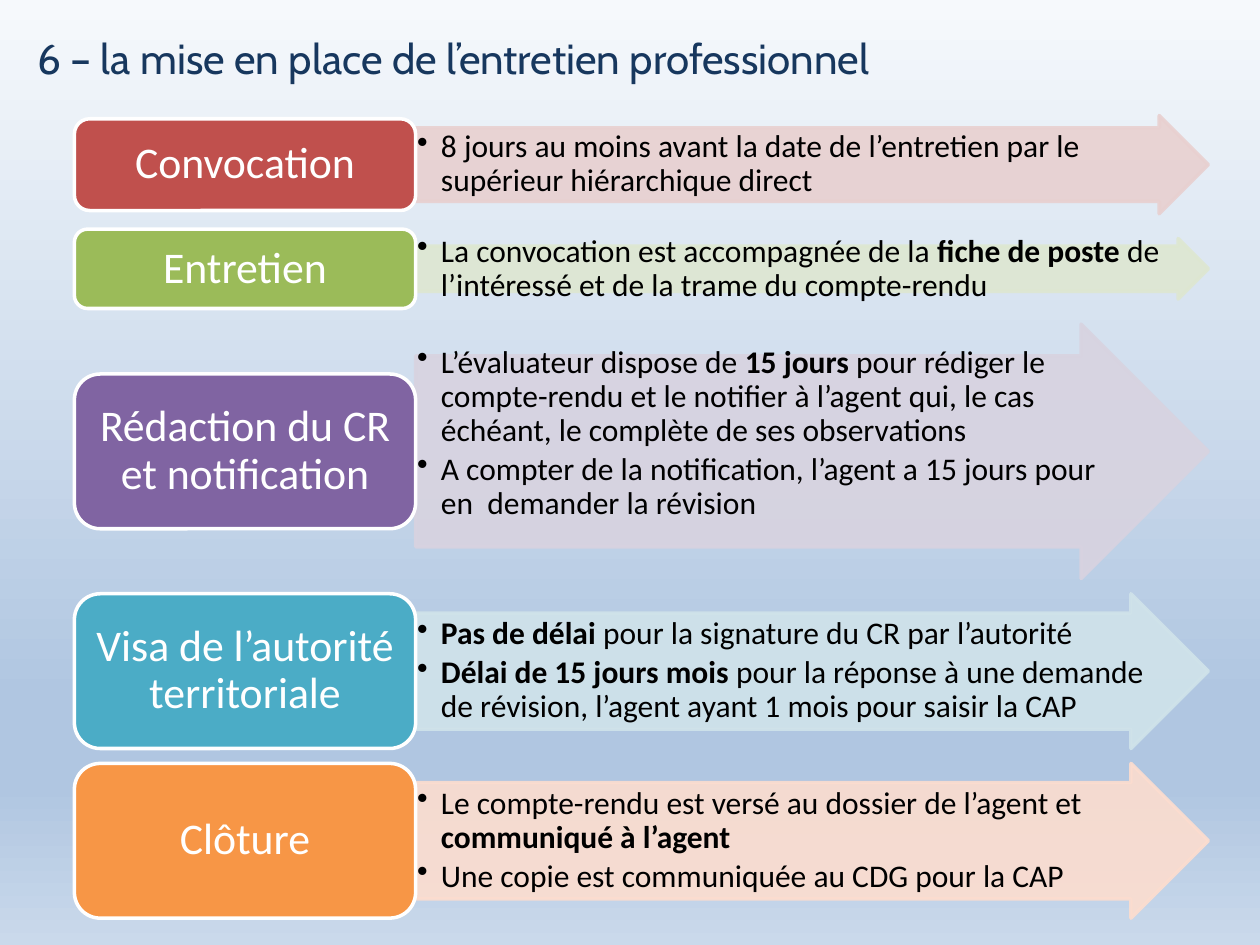
from lxml.etree import SubElement
from pptx import Presentation
from pptx.dml.color import RGBColor
from pptx.enum.shapes import MSO_SHAPE as SHAPE
from pptx.enum.text import MSO_ANCHOR as ANCHOR, PP_ALIGN as ALIGN
from pptx.oxml.ns import qn
from pptx.util import Cm, Pt

TITLE = "6 – la mise en place de l’entretien professionnel"
BACKGROUND = [(0, "F6F9FC"), (74, "B0C6E1"), (83, "B0C6E1"), (100, "CAD9EB")]

# label, label colour, arrow colour, centre y, arrow height, label height (cm),
# bullets with bold parts between asterisks
STEPS = [
    ("Convocation", "C0504D", "E8D0D0", 3.32, 1.98, 1.85,
     ["8 jours au moins avant la date de l’entretien par le supérieur hiérarchique direct"]),
    ("Entretien", "9BBB59", "DEE7D1", 5.42, 1.22, 1.6,
     ["La convocation est accompagnée de la *fiche de poste* de l’intéressé "
      "et de la trame du compte-rendu"]),
    ("Rédaction du CR et notification", "8064A2", "D8D3E0", 9.1, 5.13, 3.12,
     ["L’évaluateur dispose de *15 jours *pour rédiger le compte-rendu et le notifier "
      "à l’agent qui, le cas échéant, le complète de ses observations",
      "A compter de la notification, l’agent a 15 jours pour en  demander la révision"]),
    ("Visa de l’autorité territoriale", "4BACC6", "D0E3EA", 13.53, 3.12, 3.12,
     ["*Pas de délai *pour la signature du CR par l’autorité",
      "*Délai de 15 jours mois *pour la réponse à une demande de révision, "
      "l’agent ayant 1 mois pour saisir la CAP"]),
    ("Clôture", "F79646", "FCDDCF", 16.95, 3.12, 3.12,
     ["Le compte-rendu est versé au dossier de l’agent et *communiqué à l’agent*",
      "Une copie est communiquée au CDG pour la CAP"]),
]
LABEL_LEFT, LABEL_WIDTH, ARROW_WIDTH = 1.5, 6.88, 15.98
ARROW_LEFT = LABEL_LEFT + LABEL_WIDTH
RAISED_STEP, RAISED_INSET = 2, 0.75  # the third text sits above the arrow's middle


def rgb(value):
    return RGBColor.from_string(value)


def write(tf, paragraphs, size, color, font="Calibri", align=ALIGN.LEFT, spacing=None,
          after=None, bullet=False, anchor=ANCHOR.MIDDLE, insets=(0.25, 0.13, 0.25, 0.13)):
    tf.word_wrap = True
    tf.vertical_anchor = anchor
    tf.margin_left, tf.margin_top, tf.margin_right, tf.margin_bottom = map(Cm, insets)
    for i, text in enumerate(paragraphs):
        p = tf.add_paragraph() if i else tf.paragraphs[0]
        p.alignment = align
        if spacing:
            p.line_spacing = spacing
        if after:
            p.space_after = Pt(after)
        if bullet:
            p.level = 1
            pPr = p._p.get_or_add_pPr()
            pPr.set("marL", str(Cm(0.48)))
            pPr.set("indent", str(-Cm(0.48)))
            SubElement(pPr, qn("a:buChar"), char="•")
        for k, part in enumerate(text.split("*")):
            if part:
                r = p.add_run()
                r.text = part
                r.font.name, r.font.size = font, Pt(size)
                r.font.bold = k % 2 == 1
                r.font.color.rgb = rgb(color)


def add_block(s, kind, left, middle, width, height, fill, line, alpha=None):
    """Add a shape centred vertically on middle, with an optional opacity in percent."""
    sp = s.shapes.add_shape(kind, Cm(left), Cm(middle - height / 2), Cm(width), Cm(height))
    sp.shadow.inherit = False
    sp.fill.solid()
    sp.fill.fore_color.rgb = rgb(fill)
    sp.line.color.rgb = rgb(line)
    sp.line.width = Pt(2)
    if alpha:
        for color in sp._element.spPr.iter(qn("a:srgbClr")):
            SubElement(color, qn("a:alpha"), val=str(alpha * 1000))
    return sp


def paint_background(s):
    fill = s.background.fill
    fill.gradient()
    fill.gradient_angle = 270
    stops = s.element.find(".//" + qn("a:gsLst"))
    for stop in list(stops):
        stops.remove(stop)
    for position, color in BACKGROUND:
        stop = SubElement(stops, qn("a:gs"), pos=str(position * 1000))
        SubElement(stop, qn("a:srgbClr"), val=color)


def main():
    prs = Presentation()
    prs.slide_width, prs.slide_height = Cm(25.4), Cm(19.05)
    s = prs.slides.add_slide(prs.slide_layouts[5])
    paint_background(s)

    title = s.shapes.title
    title.left, title.top, title.width, title.height = Cm(0.5), Cm(0.53), Cm(20.78), Cm(1.28)
    write(title.text_frame, [TITLE], 24, "17375E", font="Cabin", anchor=ANCHOR.TOP)

    for i, (label, color, pale, middle, arrow_h, label_h, bullets) in enumerate(STEPS):
        arrow = add_block(s, SHAPE.RIGHT_ARROW, ARROW_LEFT, middle, ARROW_WIDTH, arrow_h,
                          pale, pale, alpha=90)
        arrow.adjustments[0], arrow.adjustments[1] = 0.75, 0.5
        bottom = RAISED_INSET if i == RAISED_STEP else 0.03
        write(arrow.text_frame, bullets, 18, "000000", spacing=0.9, after=2.7,
              bullet=True, insets=(0.03, 0.03, 0.03, bottom))
        box = add_block(s, SHAPE.ROUNDED_RECTANGLE, LABEL_LEFT, middle, LABEL_WIDTH, label_h,
                        color, "FFFFFF")
        write(box.text_frame, [label], 25, "FFFFFF", align=ALIGN.CENTER, spacing=0.9)

    prs.save("out.pptx")


if __name__ == "__main__":
    main()
